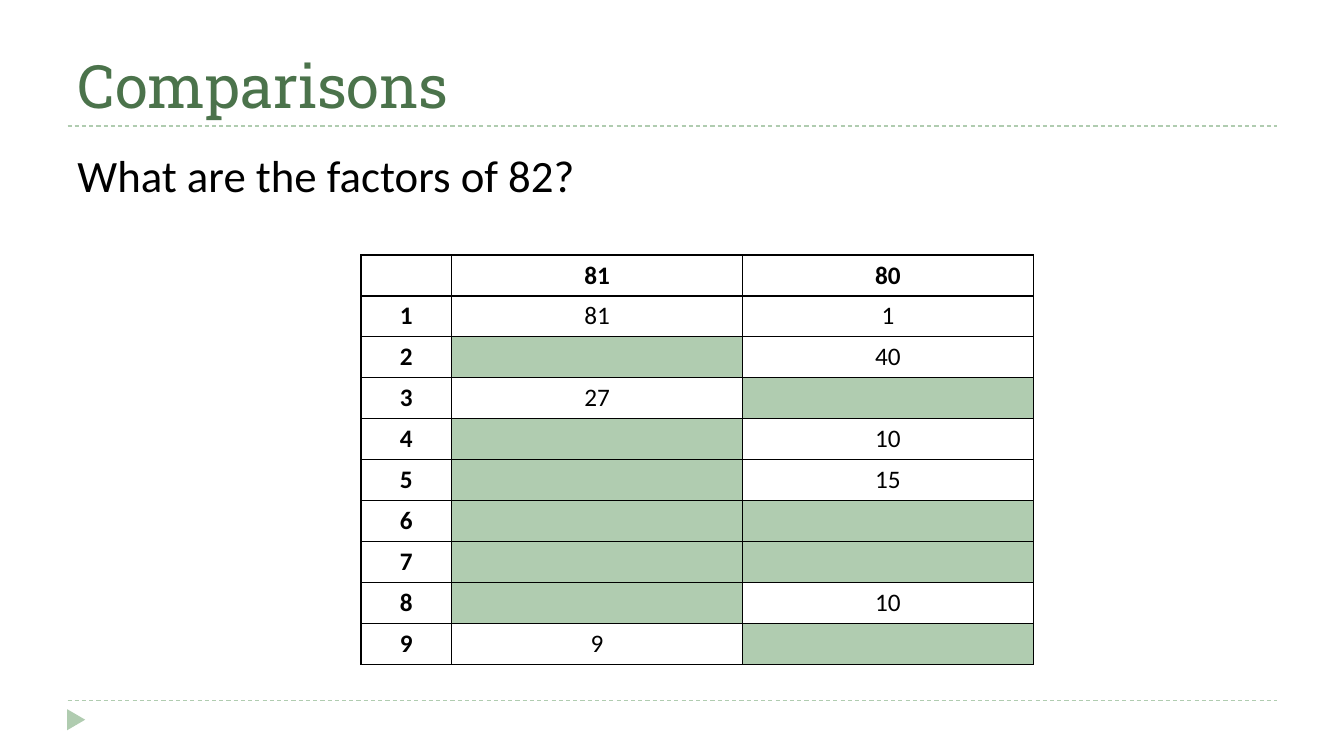
import dataclasses

import pptx
import pptx.dml.color
import pptx.enum.dml
import pptx.enum.shapes
import pptx.enum.text
import pptx.oxml
import pptx.oxml.ns
import pptx.util
from pptx.util import Inches

ALIGN = pptx.enum.text.PP_ALIGN
ANCHOR = pptx.enum.text.MSO_ANCHOR


@dataclasses.dataclass(frozen=True)
class Theme:
    heading: str = "4B734B"
    accent: str = "B0CCB0"
    ink: str = "000000"
    paper: str = "FFFFFF"
    heading_font: str = "Roboto Slab"
    body_font: str = "Calibri"
    title_size: float = 42.7
    question_size: float = 32
    cell_size: float = 18


THEME = Theme()

FACTOR_HEADER = ["", "81", "80"]
FACTOR_PAIRS = [
    ["81", "1"],
    ["", "40"],
    ["27", ""],
    ["", "10"],
    ["", "15"],
    ["", ""],
    ["", ""],
    ["", "10"],
    ["9", ""],
]


def rgb(value):
    return pptx.dml.color.RGBColor.from_string(value)


def write(frame, text, *, size, font=THEME.body_font, color=THEME.ink,
          bold=False, align=ALIGN.LEFT):
    paragraph = frame.paragraphs[0]
    paragraph.alignment = align
    run = paragraph.add_run()
    run.text = text
    run.font.size = pptx.util.Pt(size)
    run.font.name = font
    run.font.bold = bold
    run.font.color.rgb = rgb(color)


def add_rule(slide, left, top, width):
    rule = slide.shapes.add_connector(
        pptx.enum.shapes.MSO_CONNECTOR.STRAIGHT,
        Inches(left), Inches(top), Inches(left + width), Inches(top))
    rule.line.color.rgb = rgb(THEME.accent)
    rule.line.width = pptx.util.Pt(0.75)
    rule.line.dash_style = pptx.enum.dml.MSO_LINE.DASH
    properties = rule._element.spPr
    properties.append(pptx.oxml.parse_xml(
        f'<a:effectLst {pptx.oxml.ns.nsdecls("a")}/>'))


def add_title(slide, left, top, width, height):
    title = slide.shapes.title
    title.left, title.top = Inches(left), Inches(top)
    title.width, title.height = Inches(width), Inches(height)
    frame = title.text_frame
    frame.auto_size = pptx.enum.text.MSO_AUTO_SIZE.NONE
    frame.vertical_anchor = ANCHOR.BOTTOM
    write(frame, "Comparisons", size=THEME.title_size,
          font=THEME.heading_font, color=THEME.heading)
    add_rule(slide, left, top + height, width)


def add_footer(slide, left, top, width):
    add_rule(slide, left, top, width)
    marker = slide.shapes.add_shape(
        pptx.enum.shapes.MSO_SHAPE.ISOSCELES_TRIANGLE,
        Inches(left - 0.02), Inches(top + 0.1), Inches(0.21), Inches(0.18))
    marker.rotation = 90
    marker.shadow.inherit = False
    marker.fill.solid()
    marker.fill.fore_color.rgb = rgb(THEME.accent)
    marker.line.fill.background()


def add_question(slide, left, top, width, height):
    question = slide.shapes.add_textbox(
        Inches(left), Inches(top), Inches(width), Inches(height))
    question.text_frame.word_wrap = True
    write(question.text_frame, "What are the factors of 82?",
          size=THEME.question_size)


def add_borders(cell):
    properties = cell._tc.get_or_add_tcPr()
    for position, side in enumerate(("lnL", "lnR", "lnT", "lnB")):
        properties.insert(position, pptx.oxml.parse_xml(
            f'<a:{side} {pptx.oxml.ns.nsdecls("a")} w="12700"><a:solidFill>'
            f'<a:srgbClr val="{THEME.ink}"/></a:solidFill></a:{side}>'))


def add_factor_table(slide, left, top, width, height):
    """Draw one row per divisor; a shaded cell means it does not divide."""
    rows = [FACTOR_HEADER] + [
        [str(divisor), *pair] for divisor, pair in enumerate(FACTOR_PAIRS, 1)]
    table = slide.shapes.add_table(
        len(rows), len(FACTOR_HEADER),
        Inches(left), Inches(top), Inches(width), Inches(height)).table
    divisor_width = 0.9
    number_width = (width - divisor_width) / 2
    for column, size in zip(table.columns,
                            (divisor_width, number_width, number_width)):
        column.width = Inches(size)
    for r, row in enumerate(rows):
        for c, value in enumerate(row):
            cell = table.cell(r, c)
            is_heading = r == 0 or c == 0
            shaded = not value and not is_heading
            cell.fill.solid()
            cell.fill.fore_color.rgb = rgb(
                THEME.accent if shaded else THEME.paper)
            add_borders(cell)
            if value:
                write(cell.text_frame, value, size=THEME.cell_size,
                      bold=is_heading, align=ALIGN.CENTER)


def main():
    deck = pptx.Presentation()
    deck.slide_width, deck.slide_height = Inches(13.33), Inches(7.5)
    slide = deck.slides.add_slide(deck.slide_layouts.get_by_name("Title Only"))
    margin, content_width = 0.67, 12
    add_footer(slide, margin, 6.95, content_width)
    add_title(slide, margin, 0.17, content_width, 1.08)
    add_factor_table(slide, 3.58, 2.53, 6.67, 4.06)
    add_question(slide, margin, 1.42, 9, 0.67)
    deck.save("out.pptx")


if __name__ == "__main__":
    main()
